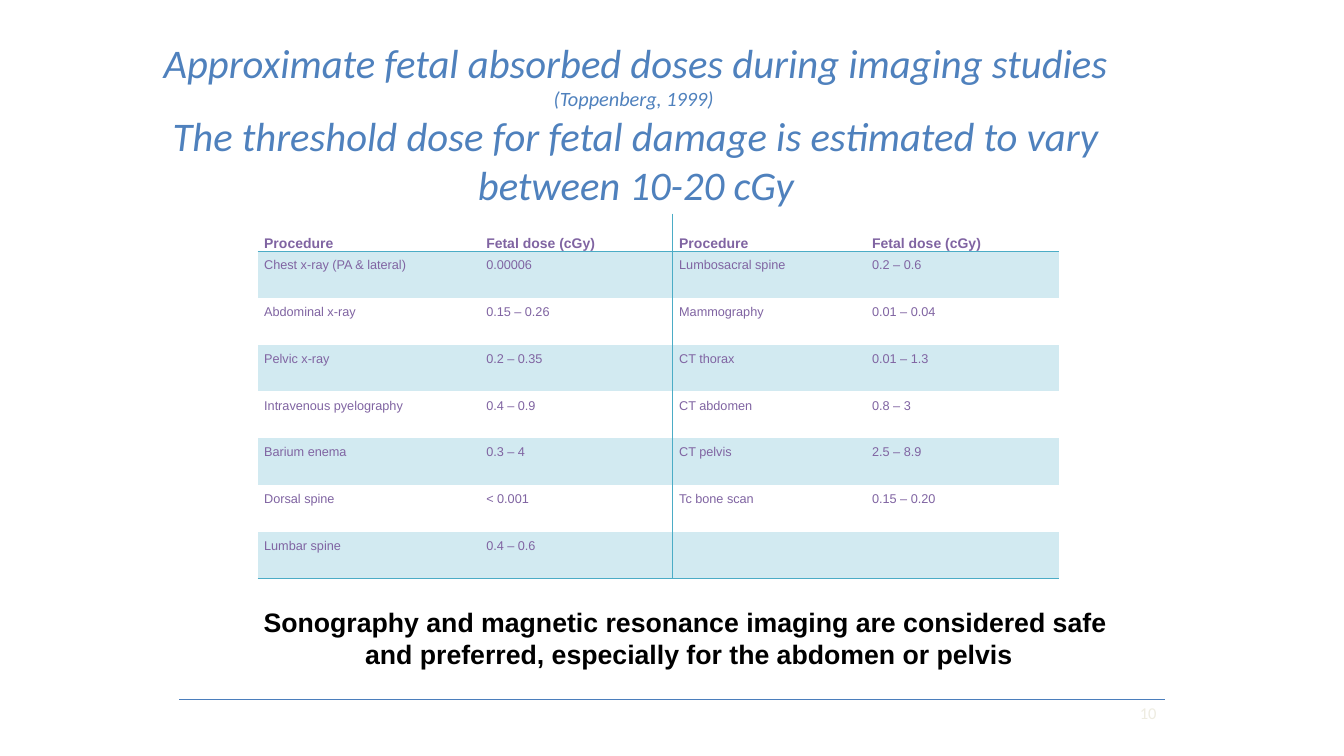
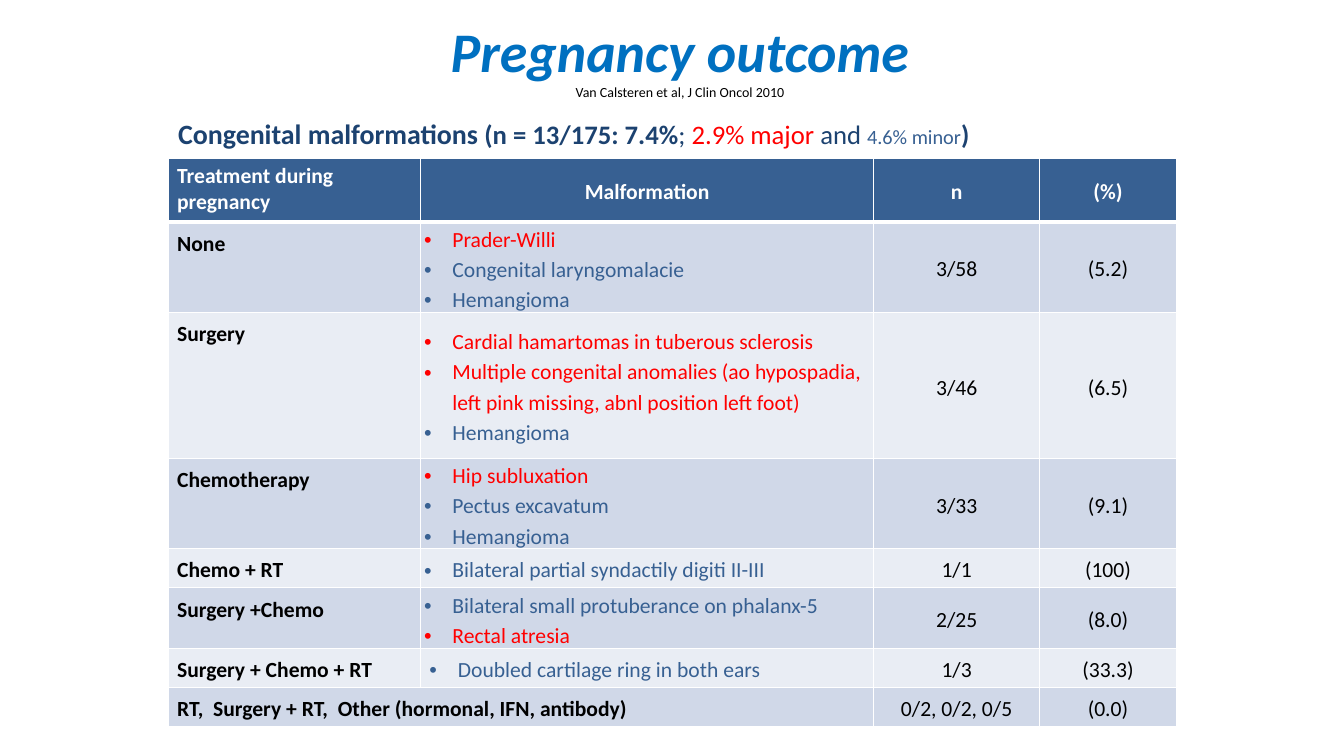
"""Build two slides on imaging doses and outcomes in pregnancy."""
from dataclasses import dataclass, replace
from typing import Any, NamedTuple

from lxml.etree import SubElement
from pptx import Presentation
from pptx.dml.color import RGBColor
from pptx.enum.shapes import MSO_CONNECTOR
from pptx.enum.text import MSO_ANCHOR, MSO_AUTO_SIZE, PP_ALIGN
from pptx.oxml.ns import qn
from pptx.util import Cm, Pt

HUES = {
    "title": "4F81BD", "bright": "0070C0", "black": "000000", "white": "FFFFFF",
    "purple": "8064A2", "teal": "4BACC6", "pale": "D2EAF1", "rule": "4B7EBC",
    "faint": "EEECE1", "navy": "1C4270", "blue": "376092", "red": "FF0000",
    "dark": "D0D8E8", "light": "E9EDF4",
}
SANS, BODY = "Arial", "Calibri"
LEFT, MID, RIGHT, FULL = PP_ALIGN.LEFT, PP_ALIGN.CENTER, PP_ALIGN.RIGHT, PP_ALIGN.JUSTIFY
SIDES = {"l": "lnL", "r": "lnR", "t": "lnT", "b": "lnB"}
MARGINS = ("margin_left", "margin_top", "margin_right", "margin_bottom")


class Box(NamedTuple):
    """Place and size in centimetres."""
    left: float
    top: float
    width: float
    height: float


class Pad(NamedTuple):
    """Insets in centimetres."""
    left: float = 0.25
    top: float = 0.13
    right: float = 0.25
    low: float = 0.13


@dataclass(frozen=True)
class Run:
    """Text with one look."""
    text: str
    size: float
    hue: str
    bold: bool = False
    slant: bool = False
    font: str = BODY


@dataclass(frozen=True)
class Para:
    """Paragraph with its spacing."""
    runs: tuple[Run, ...]
    align: Any = LEFT
    line: float = 1.0
    after: float = 0
    dot: bool = False


@dataclass(frozen=True)
class Edge:
    """Cell border; no hue means no line."""
    hue: str = ""
    width: float = 1


@dataclass(frozen=True)
class Row:
    """Treatment with its malformations and counts."""
    name: str
    finds: tuple[tuple[str, str], ...]
    count: str
    rate: str
    height: float
    wide: bool = False


TIGHT, SLIM, ROOM = Pad(0.1, 0.02, 0.1, 0), Pad(0.18, 0, 0.18, 0), Pad()

DOSES = (
    ("Procedure", "Fetal dose (cGy)") * 2,
    ("Chest x-ray (PA & lateral)", "0.00006", "Lumbosacral spine", "0.2 – 0.6"),
    ("Abdominal x-ray", "0.15 – 0.26", "Mammography", "0.01 – 0.04"),
    ("Pelvic x-ray", "0.2 – 0.35", "CT thorax", "0.01 – 1.3"),
    ("Intravenous pyelography", "0.4 – 0.9", "CT abdomen", "0.8 – 3"),
    ("Barium enema", "0.3 – 4", "CT pelvis", "2.5 – 8.9"),
    ("Dorsal spine", "< 0.001", "Tc bone scan", "0.15 – 0.20"),
    ("Lumbar spine", "0.4 – 0.6", "", ""),
)
HEADS = ("Treatment during pregnancy", "Malformation", "n", "(%)")
CASES = (
    Row("None", (("Prader-Willi", "red"), ("Congenital laryngomalacie", "blue"),
                 ("Hemangioma", "blue")), "3/58", "(5.2)", 2.51),
    Row("Surgery", (("Cardial hamartomas in tuberous sclerosis", "red"),
                    ("Multiple congenital anomalies (ao hypospadia, "
                     "left pink missing, abnl position left foot)", "red"),
                    ("Hemangioma", "blue")), "3/46", "(6.5)", 4.06),
    Row("Chemotherapy", (("Hip subluxation", "red"), ("Pectus excavatum", "blue"),
                         ("Hemangioma", "blue")), "3/33", "(9.1)", 2.51),
    Row("Chemo + RT", (("Bilateral partial syndactily digiti II-III", "blue"),),
        "1/1", "(100)", 1.09),
    Row("Surgery +Chemo", (("Bilateral small protuberance on phalanx-5", "blue"),
                           ("Rectal atresia", "red")), "2/25", "(8.0)", 1.68),
    Row("Surgery + Chemo + RT", (("Doubled cartilage ring in both ears", "blue"),),
        "1/3", "(33.3)", 1.09, True),
    Row("RT,  Surgery + RT,  Other (hormonal, IFN, antibody)", (),
        "0/2, 0/2, 0/5", "(0.0)", 1.09),
)


def tint(hue: str) -> RGBColor:
    """Look up a colour."""
    return RGBColor.from_string(HUES[hue])


def put(item: Any, form: dict[str, Any]) -> None:
    """Set each format value on an item."""
    for key, val in form.items():
        setattr(item, key, val)


def pads(pad: Pad) -> dict[str, Any]:
    """Turn insets into format values."""
    return {key: Cm(val) for key, val in zip(MARGINS, pad)}


def write(frame: Any, paras: tuple[Para, ...]) -> None:
    """Fill a text frame with paragraphs."""
    for num, para in enumerate(paras):
        line = frame.paragraphs[0] if num == 0 else frame.add_paragraph()
        if para.dot:
            prop = line._p.get_or_add_pPr()
            prop.set("marL", str(Cm(0.79)))
            prop.set("indent", str(Cm(-0.79)))
            SubElement(prop, qn("a:buFont")).set("typeface", SANS)
            SubElement(prop, qn("a:buChar")).set("char", "•")
        put(line, {"alignment": para.align, "line_spacing": para.line,
                   "space_before": Pt(0), "space_after": Pt(para.after)})
        for run in para.runs:
            part = line.add_run()
            part.text = run.text
            put(part.font, {"name": run.font, "size": Pt(run.size),
                            "bold": run.bold, "italic": run.slant})
            part.font.color.rgb = tint(run.hue)


def title(slide: Any, box: Box, paras: tuple[Para, ...], pad: Pad, anchor: Any) -> None:
    """Move and fill the title placeholder."""
    shape = slide.shapes.title
    put(shape, {key: Cm(val) for key, val in box._asdict().items()})
    put(shape.text_frame, {"word_wrap": True, "auto_size": MSO_AUTO_SIZE.NONE,
                           "vertical_anchor": anchor, **pads(pad)})
    write(shape.text_frame, paras)


def label(slide: Any, box: Box, paras: tuple[Para, ...], pad: Pad = ROOM,
          wrap: bool = True) -> None:
    """Add a text box."""
    frame = slide.shapes.add_textbox(*map(Cm, box)).text_frame
    put(frame, {"word_wrap": wrap, **pads(pad)})
    write(frame, paras)


def grid(slide: Any, left: float, top: float, cols: tuple[float, ...],
         rows: tuple[float, ...]) -> Any:
    """Add a plain table with given column widths and row heights."""
    box = Box(left, top, sum(cols), sum(rows))
    table = slide.shapes.add_table(len(rows), len(cols), *map(Cm, box)).table
    put(table, {"first_row": False, "horz_banding": False})
    for col, width in zip(table.columns, cols):
        col.width = Cm(width)
    for row, height in zip(table.rows, rows):
        row.height = Cm(height)
    return table


def fill(cell: Any, paras: tuple[Para, ...], hue: str, edges: dict[str, Edge],
         pad: Pad, anchor: Any) -> None:
    """Set a cell's text, fill and borders."""
    put(cell, {"vertical_anchor": anchor, **pads(pad)})
    write(cell.text_frame, paras)
    prop = cell._tc.get_or_add_tcPr()
    for side, tag in SIDES.items():
        edge = edges.get(side, Edge())
        line = SubElement(prop, qn(f"a:{tag}"))
        if edge.hue:
            line.set("w", str(Pt(edge.width)))
            paint = SubElement(line, qn("a:solidFill"))
            SubElement(paint, qn("a:srgbClr")).set("val", HUES[edge.hue])
        else:
            SubElement(line, qn("a:noFill"))
    if hue:
        cell.fill.solid()
        cell.fill.fore_color.rgb = tint(hue)
    else:
        cell.fill.background()


def doses(slide: Any) -> None:
    """Draw the slide of fetal doses."""
    big = Run("Approximate fetal absorbed doses during imaging studies ", 32, "title", slant=True)
    cite = replace(big, text="(Toppenberg, 1999) ", size=16)
    rest = replace(big, text="The threshold dose for fetal damage is estimated "
                             "to vary between 10-20 cGy")
    title(slide, Box(2.9, 0.89, 29.54, 5.05),
          (Para((big, cite), MID), Para((rest,), MID)), ROOM, MSO_ANCHOR.MIDDLE)

    last = len(DOSES) - 1
    table = grid(slide, 7.16, 5.94, (6.17, 5.36, 5.36, 5.36), (1.04,) + (1.3,) * last)
    teal = Edge("teal")
    for row, words in enumerate(DOSES):
        head = row == 0
        for col, word in enumerate(words):
            on = {"t": row == 1, "b": row in (0, last), "r": col == 1, "l": col == 2}
            run = Run(word, 11 if head else 10, "purple", head, font=SANS)
            align = LEFT if head or (row, col) == (1, 0) else FULL
            fill(table.cell(row, col), (Para((run,), align, 1.5, 10),) if word else (),
                 "pale" if row % 2 else "", {side: teal for side, yes in on.items() if yes},
                 SLIM, MSO_ANCHOR.BOTTOM if head else MSO_ANCHOR.TOP)

    rule = slide.shapes.add_connector(MSO_CONNECTOR.STRAIGHT, Cm(4.98), Cm(19.43),
                                      Cm(32.36), Cm(19.43))
    rule.line.color.rgb = tint("rule")
    rule.line.width = Pt(0.75)
    SubElement(rule._element.spPr, qn("a:effectLst"))

    notes = ("Sonography and magnetic resonance imaging are considered safe ",
             "and preferred, especially for the abdomen or pelvis")
    label(slide, Box(7.06, 16.71, 24.16, 2.03),
          tuple(Para((Run(note, 21, "black", True, font=SANS),), MID) for note in notes),
          wrap=False)
    label(slide, Box(29.46, 19.4, 2.92, 1), (Para((Run("10", 13, "faint"),), RIGHT),))


def births(slide: Any) -> None:
    """Draw the slide of pregnancy outcomes."""
    title(slide, Box(4.06, 0, 29.67, 2.79),
          (Para((Run("Pregnancy outcome", 44, "bright", True, True),), MID),
           Para((Run("Van Calsteren et al, J Clin Oncol 2010", 11, "black"),), MID)),
          Pad(0, 0.15, 0, 0), MSO_ANCHOR.BOTTOM)
    label(slide, Box(4.67, 3.1, 28.14, 1.4), (Para((
        Run("Congenital malformations ", 22, "navy", True),
        Run("(n = 13/175: 7.4%", 21, "navy", True),
        Run("; ", 21, "navy"),
        Run("2.9% major ", 21, "red"),
        Run("and ", 21, "navy"),
        Run("4.6% minor", 16, "blue"),
        Run(")", 21, "navy", True))),), Pad(0.28, 0.15, 0.28, 0.15))

    table = grid(slide, 4.67, 4.39, (7.01, 12.6, 4.6, 3.81),
                 (1.78,) + tuple(case.height for case in CASES))
    thin, thick = Edge("white"), Edge("white", 3)
    frame = dict.fromkeys(SIDES, thin)
    for col, head in enumerate(HEADS):
        para = Para((Run(head, 17, "white", True),), MID if col else LEFT, 1.15 if col else 1)
        fill(table.cell(0, col), (para,), "blue", {**frame, "b": thick},
             TIGHT if col else ROOM, MSO_ANCHOR.MIDDLE if col else MSO_ANCHOR.TOP)
    for row, case in enumerate(CASES, 1):
        hue = "dark" if row % 2 else "light"
        edges = {**frame, "t": thick} if row == 1 else frame
        name = Para((Run(case.name, 17, "black", True),), line=1.15)
        finds = tuple(Para((Run(text, 17, ink),), line=1.15, dot=True)
                      for text, ink in case.finds)
        sums = [(Para((Run(text, 17, "black"),), MID, 1.15),)
                for text in (case.count, case.rate)]
        for col, paras in enumerate(((name,), finds, *sums)):
            roomy = col == 0 or (col == 1 and case.wide)
            fill(table.cell(row, col), paras, hue, edges, ROOM if roomy else TIGHT,
                 MSO_ANCHOR.TOP if roomy else MSO_ANCHOR.MIDDLE)
        if not finds:
            table.cell(row, 0).merge(table.cell(row, 1))


def main() -> None:
    """Build and save the deck."""
    deck = Presentation()
    put(deck, {"slide_width": Cm(37.34), "slide_height": Cm(21.01)})
    for draw in (doses, births):
        draw(deck.slides.add_slide(deck.slide_layouts[5]))
    deck.save("out.pptx")


if __name__ == "__main__":
    main()
